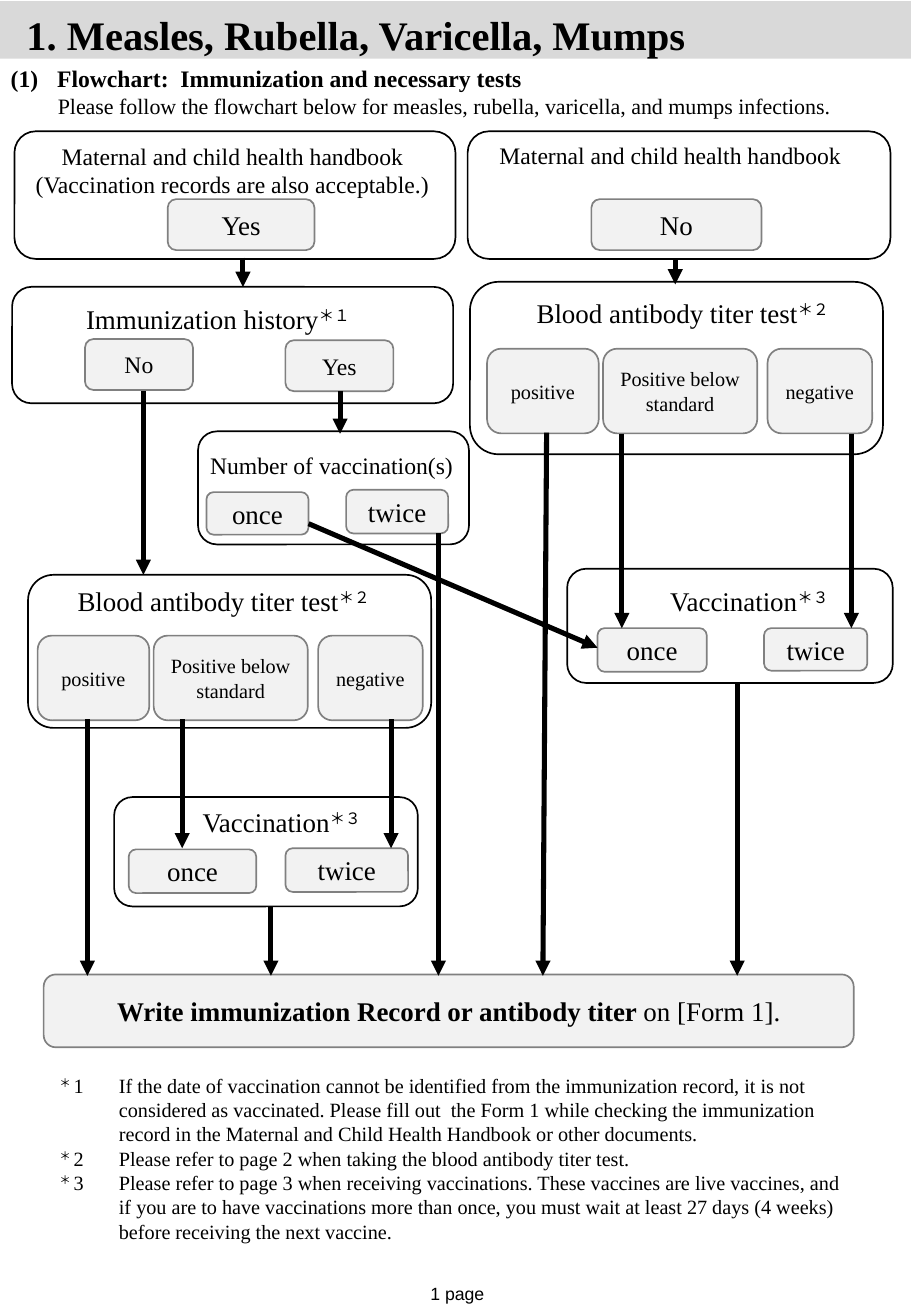
import pptx
import pptx.dml.color
import pptx.enum.shapes
import pptx.enum.text
import pptx.oxml.ns
import pptx.util
from lxml import etree

Pt = pptx.util.Pt
SHAPES = pptx.enum.shapes.MSO_SHAPE
ALIGN = pptx.enum.text.PP_ALIGN
ANCHOR = pptx.enum.text.MSO_ANCHOR
qn = pptx.oxml.ns.qn


def color(hex_code):
    return pptx.dml.color.RGBColor.from_string(hex_code)


class Flowchart:
    font, ink = "Times New Roman", "000000"
    button_fill, button_line = "F2F2F2", "808080"

    def __init__(self, slide):
        self.slide = slide

    def wording(self, paragraph, text, size, bold=False, raised=False, font=None):
        run = paragraph.add_run()
        run.text = text
        run.font.name = font or self.font
        run.font.size = Pt(size)
        run.font.bold = bold
        run.font.color.rgb = color(self.ink)
        if raised:
            run._r.get_or_add_rPr().set("baseline", "30000")

    def hang(self, paragraph, indent, first=0):
        properties = paragraph._p.get_or_add_pPr()
        properties.set("marL", str(Pt(indent)))
        properties.set("indent", str(Pt(first)))
        return properties

    def box(self, kind, left, top, width, height, fill, line=None):
        shape = self.slide.shapes.add_shape(
            kind, Pt(left), Pt(top), Pt(width), Pt(height))
        shape.shadow.inherit = False
        shape.fill.solid()
        shape.fill.fore_color.rgb = color(fill)
        if line:
            shape.line.color.rgb = color(line)
            shape.line.width = Pt(1)
        else:
            shape.line.fill.background()
        return shape

    def panel(self, *area):
        self.box(SHAPES.ROUNDED_RECTANGLE, *area, "FFFFFF", self.ink)

    def button(self, area, size, *texts):
        """Each text is a (words, bold) pair."""
        shape = self.box(SHAPES.ROUNDED_RECTANGLE, *area,
                         self.button_fill, self.button_line)
        frame = shape.text_frame
        frame.word_wrap = True
        frame.margin_left = frame.margin_right = Pt(3.6)
        frame.vertical_anchor = ANCHOR.MIDDLE
        paragraph = frame.paragraphs[0]
        paragraph.alignment = ALIGN.CENTER
        for words, bold in texts:
            self.wording(paragraph, words, size, bold)

    def text_area(self, left, top, width, height, count=1, align=ALIGN.LEFT):
        """Returns the paragraphs of a new text box."""
        frame = self.slide.shapes.add_textbox(
            Pt(left), Pt(top), Pt(width), Pt(height)).text_frame
        frame.word_wrap = True
        frame.margin_right = Pt(3.6 if align == ALIGN.LEFT else 7.2)
        for _ in range(count - 1):
            frame.add_paragraph()
        for paragraph in frame.paragraphs:
            paragraph.alignment = align
        return frame.paragraphs

    def heading(self, left, top, text, mark="", size=16):
        paragraph = self.text_area(left, top, 206, 26.6)[0]
        self.wording(paragraph, text, size)
        if mark:
            self.wording(paragraph, mark, size, raised=True)

    def titer_test(self, panel, heading_at, left, top):
        self.panel(*panel)
        self.heading(*heading_at, "Blood antibody titer test", "＊２")
        results = [("positive", 0, 66.2), ("Positive below standard", 68.8, 91.4),
                   ("negative", 166.3, 62)]
        for result, offset, width in results:
            self.button((left + offset, top, width, 50.2), 12, (result, False))

    def choice(self, panel, heading, buttons, size=16):
        self.panel(*panel)
        self.heading(*heading)
        for words, area in buttons:
            self.button(area, size, (words, False))

    def arrow(self, x1, y1, x2, y2):
        connector = self.slide.shapes.add_connector(
            pptx.enum.shapes.MSO_CONNECTOR.STRAIGHT, Pt(x1), Pt(y1), Pt(x2), Pt(y2))
        connector.line.color.rgb = color(self.ink)
        connector.line.width = Pt(3)
        line = connector._element.spPr.find(qn("a:ln"))
        etree.SubElement(line, qn("a:tailEnd"), type="triangle")
        etree.SubElement(connector._element.spPr, qn("a:effectLst"))


def main():
    deck = pptx.Presentation()
    deck.slide_width, deck.slide_height = Pt(540), Pt(779.76)
    chart = Flowchart(deck.slides.add_slide(deck.slide_layouts[6]))

    # Title and introduction
    chart.box(SHAPES.RECTANGLE, 0, 0.7, 540, 34, "D9D9D9")
    title = chart.text_area(8.6, 2.2, 519, 36)[0]
    chart.wording(title, "1. Measles, Rubella, Varicella, Mumps", 24, bold=True)
    section, advice = chart.text_area(-0.7, 34.6, 540, 41, 2)
    numbering = chart.hang(section, 27.5, -27.5)
    etree.SubElement(numbering, qn("a:buFont"), typeface="+mj-lt")
    etree.SubElement(numbering, qn("a:buAutoNum"), type="arabicParenBoth")
    chart.wording(section, "Flowchart:  Immunization and necessary tests", 14, bold=True)
    chart.hang(advice, 27.9)
    chart.wording(advice, "Please follow the flowchart below for measles, rubella, "
                  "varicella, and mumps infections.", 13)

    # Handbook available or not
    handbook = "Maternal and child health handbook"
    handbooks = [
        ((8.6, 77.8, 261.4, 75.6), (10.1, 80.6, 255.6, 41),
         [handbook, "(Vaccination records are also acceptable.)"],
         "Yes", (99.4, 118, 87, 30.2)),
        ((277.2, 77.8, 250.6, 75.6), (283.7, 80, 227.5, 24.5),
         [handbook], "No", (350.6, 118, 100.8, 30.2)),
    ]
    for panel, text_at, lines, answer, answer_at in handbooks:
        chart.panel(*panel)
        paragraphs = chart.text_area(*text_at, len(lines), ALIGN.CENTER)
        for paragraph, line in zip(paragraphs, lines):
            chart.wording(paragraph, line, 14)
        chart.button(answer_at, 16, (answer, False))

    # Immunization history and number of vaccinations
    chart.choice((7.2, 170, 261.4, 69), (43.9, 175.7, "Immunization history", "＊１"),
                 [("No", (50.4, 200.9, 64, 30.2)), ("Yes", (169.2, 201.6, 64, 30.2))], 14)
    chart.choice((117.4, 255.6, 160.6, 67),
                 (117.4, 263.5, "Number of vaccination(s)", "", 14),
                 [("once", (122.4, 291.6, 60.5, 25.2)),
                  ("twice", (205.2, 290.2, 60.5, 25.9))])

    # Blood tests
    chart.titer_test((278.6, 167, 244.8, 102.2), (311, 172), 288.7, 206.6)
    chart.titer_test((16.6, 340.6, 239, 90.7), (38.9, 342.7), 22.3, 376.6)

    # Vaccinations
    chart.choice((336.2, 337, 193, 67.7), (390.2, 342.7, "Vaccination", "＊３"),
                 [("once", (354.2, 372.2, 64.8, 25.9)),
                  ("twice", (452.9, 372.2, 61.2, 25.2))])
    chart.choice((67.7, 472.3, 180, 64.8), (113, 473.8, "Vaccination", "＊３"),
                 [("once", (76.3, 503.3, 75.6, 25.9)),
                  ("twice", (169.2, 502.6, 72.7, 25.9))])

    # Final record
    chart.button((25.9, 577.4, 480.2, 43.2), 16,
                 ("Write immunization Record or antibody titer ", True),
                 ("on [Form 1].", False))

    # Arrows: straight down, then slanted
    record_top = 578.2
    for x, start, end in [
            (144, 152.6, 170), (400.3, 153.4, 168.5), (201.6, 231.8, 257),
            (85, 231.8, 340.6), (368.6, 257, 372.2), (504.7, 257, 372.2),
            (108, 426.2, 502.6), (231.8, 426.2, 502.6), (51.8, 426.2, record_top),
            (160.6, 537.1, record_top), (259.9, 316.1, record_top),
            (437, 404.6, record_top)]:
        chart.arrow(x, start, x, end)
    chart.arrow(182.9, 310.3, 354.2, 383.8)
    chart.arrow(324, 256.3, 321.8, record_top)

    # Footnotes and page number
    notes = [
        "If the date of vaccination cannot be identified from the immunization record, "
        "it is not considered as vaccinated. Please fill out  the Form 1 while checking "
        "the immunization record in the Maternal and Child Health Handbook or other "
        "documents.",
        "Please refer to page 2 when taking the blood antibody titer test.",
        "Please refer to page 3 when receiving vaccinations. These vaccines are live "
        "vaccines, and if you are to have vaccinations more than once, you must wait at "
        "least 27 days (4 weeks) before receiving the next vaccine.",
    ]
    note_lines = chart.text_area(28.1, 632.2, 483, 108.7, len(notes))
    for number, (paragraph, note) in enumerate(zip(note_lines, notes), 1):
        chart.hang(paragraph, 35.3, -35.3)
        chart.wording(paragraph, "＊ ", 12, raised=True)
        chart.wording(paragraph, f"{number}\t{note}", 12)
    page = chart.text_area(191.5, 756.7, 159.1, 20.2, align=ALIGN.CENTER)[0]
    chart.wording(page, "1 page", 10.5, font="Arial")

    deck.save("out.pptx")


if __name__ == "__main__":
    main()
